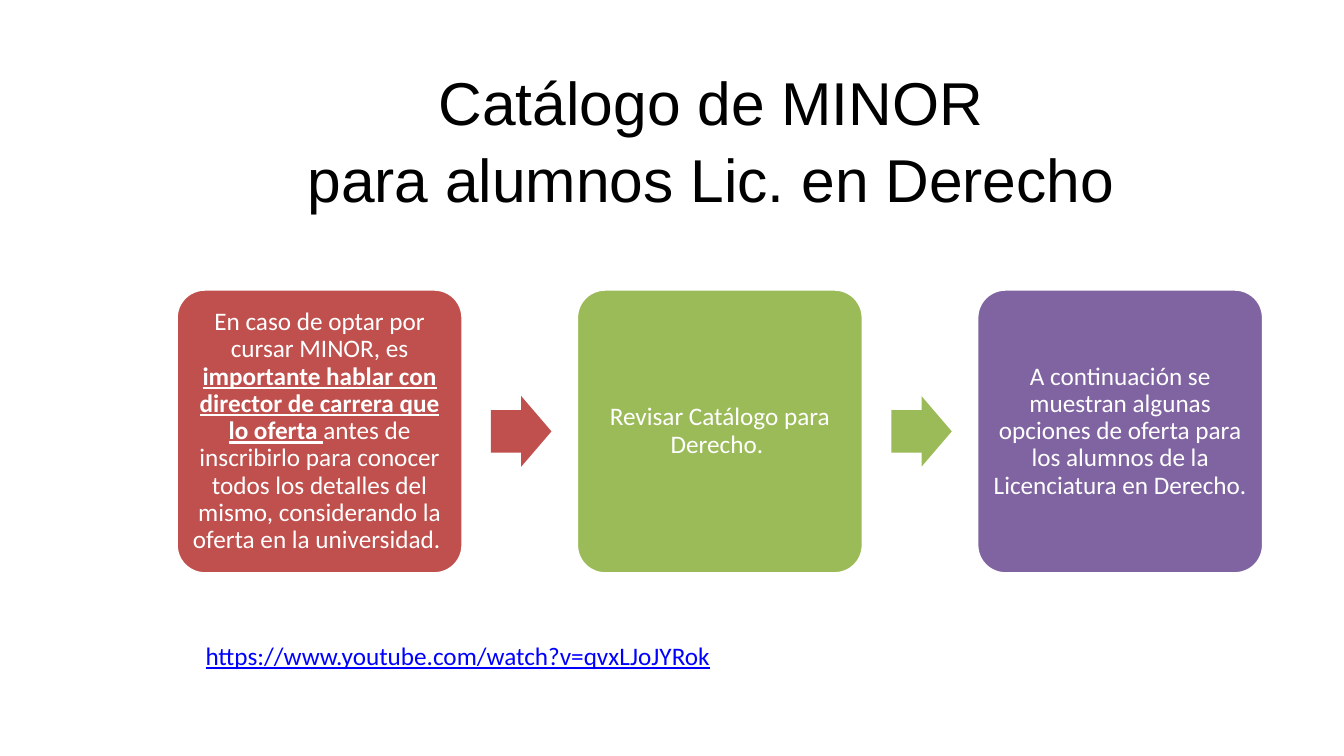
from pptx import Presentation
from pptx.dml.color import RGBColor
from pptx.enum.shapes import MSO_SHAPE as Shape
from pptx.enum.text import MSO_ANCHOR as Anchor, PP_ALIGN as Align
from pptx.util import Inches, Pt


def color(hex_value):
    return RGBColor.from_string(hex_value)


class SlideBuilder:
    BODY_FONT = "Calibri"
    BODY_SIZE = 18
    WHITE = "FFFFFF"

    def __init__(self, slide):
        self.shapes = slide.shapes

    def style(self, run, font, size, ink, strong=False, underline=False):
        run.font.name = font
        run.font.size = Pt(size)
        run.font.color.rgb = color(ink)
        run.font.bold = strong
        run.font.underline = underline

    def text(self, left, top, width, height, words, font, size, ink,
             align=Align.LEFT, anchor=Anchor.TOP, spacing=1.0, underline=False):
        frame = self.shapes.add_textbox(
            Inches(left), Inches(top), Inches(width), Inches(height)).text_frame
        frame.word_wrap = True
        frame.vertical_anchor = anchor
        frame.text = words
        paragraph = frame.paragraphs[0]
        paragraph.alignment = align
        paragraph.line_spacing = spacing
        for run in paragraph.runs:
            self.style(run, font, size, ink, underline=underline)

    def block(self, kind, left, top, width, height, fill, adjustments):
        block = self.shapes.add_shape(
            kind, Inches(left), Inches(top), Inches(width), Inches(height))
        for index, value in enumerate(adjustments):
            block.adjustments[index] = value
        block.shadow.inherit = False
        block.fill.solid()
        block.fill.fore_color.rgb = color(fill)
        block.line.fill.background()
        return block

    def step(self, left, top, width, height, fill, parts):
        """Rounded card; parts are (words, emphasised) pairs."""
        card = self.block(Shape.ROUNDED_RECTANGLE, left, top, width, height, fill, [0.1])
        card.line.color.rgb = color(self.WHITE)
        card.line.width = Pt(2)
        frame = card.text_frame
        frame.word_wrap = True
        frame.vertical_anchor = Anchor.MIDDLE
        frame.margin_left = frame.margin_right = Inches(0.07)
        frame.margin_top = frame.margin_bottom = Inches(0.07)
        paragraph = frame.paragraphs[0]
        paragraph.alignment = Align.CENTER
        paragraph.line_spacing = 0.9
        for words, emphasised in parts:
            run = paragraph.add_run()
            run.text = words
            self.style(run, self.BODY_FONT, self.BODY_SIZE, self.WHITE,
                       emphasised, emphasised)

    def arrow(self, left, top, width, height, fill):
        self.block(Shape.RIGHT_ARROW, left, top, width, height, fill, [0.6, 0.5])


def main():
    deck = Presentation()
    deck.slide_width, deck.slide_height = Inches(13.33), Inches(7.5)
    builder = SlideBuilder(deck.slides.add_slide(deck.slide_layouts[6]))

    # Title
    builder.text(2.01, 0.79, 10.25, 1.16,
                 "Catálogo de MINOR \vpara alumnos Lic. en Derecho ",
                 "Arial", 43.2, "000000", Align.CENTER, Anchor.MIDDLE, 1.05)

    # Three steps, with an arrow after each but the last
    steps = [
        ("C0504D", [
            ("En caso de optar por cursar MINOR, es ", False),
            ("importante hablar con director de carrera que lo oferta ", True),
            ("antes de inscribirlo para conocer todos los detalles del mismo, "
             "considerando la oferta en la universidad. ", False)]),
        ("9BBB59", [("Revisar Catálogo para Derecho. ", False)]),
        ("8064A2", [("A continuación se muestran algunas opciones de oferta para "
                     "los alumnos de la Licenciatura en Derecho.", False)]),
    ]
    first_left, pitch = 1.75, 3.97
    for index, (fill, parts) in enumerate(steps):
        left = first_left + index * pitch
        builder.step(left, 2.87, 2.84, 2.82, fill, parts)
        if index < len(steps) - 1:
            builder.arrow(left + 3.12, 3.93, 0.6, 0.7, fill)

    # Video address
    builder.text(1.94, 6.3, 6.4, 0.42, "https://www.youtube.com/watch?v=qvxLJoJYRok",
                 builder.BODY_FONT, builder.BODY_SIZE, "0000FF", underline=True)

    deck.save("out.pptx")


if __name__ == "__main__":
    main()
